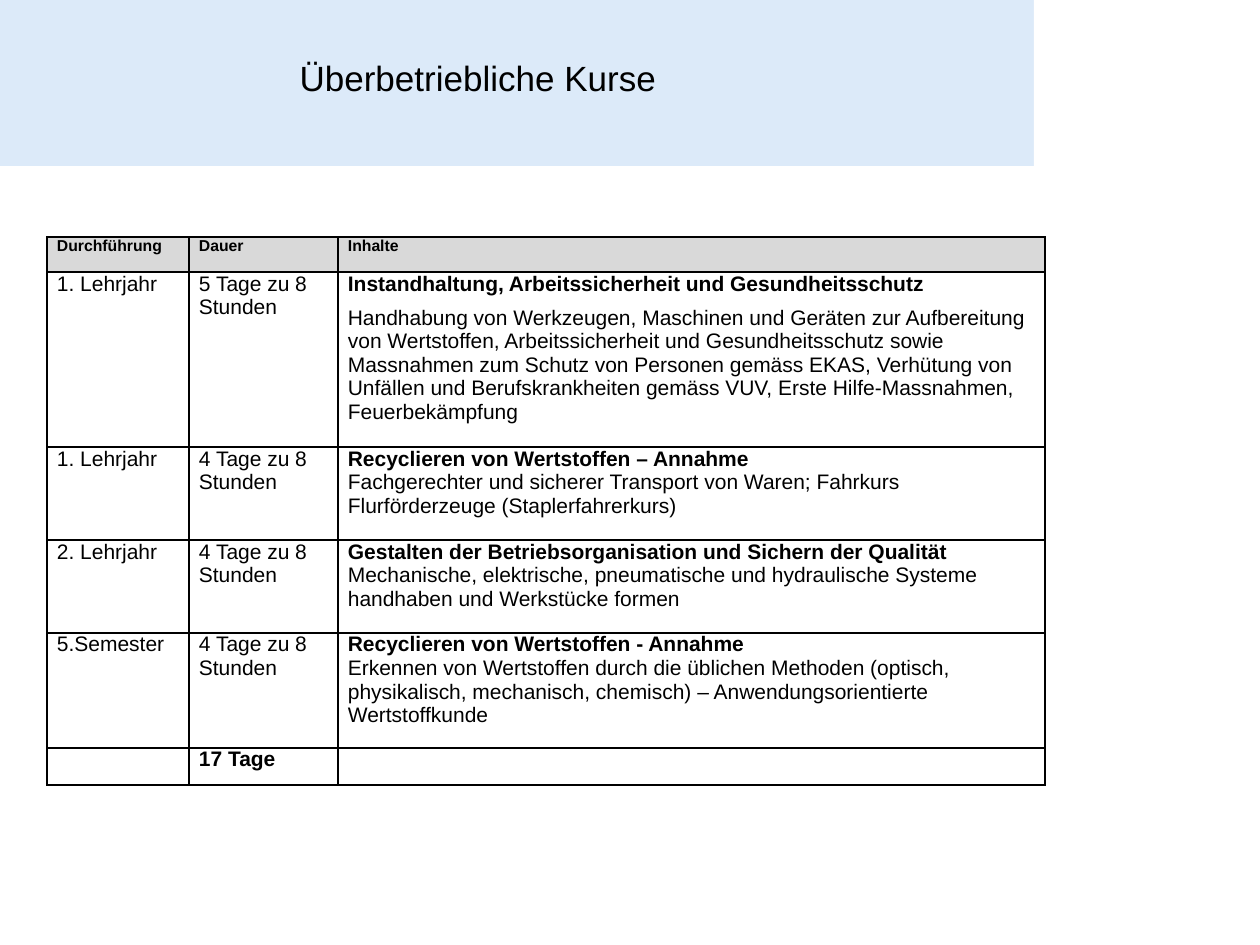
from dataclasses import dataclass

from lxml.etree import SubElement
from pptx import Presentation
from pptx.dml.color import RGBColor
from pptx.enum.shapes import MSO_SHAPE
from pptx.enum.text import MSO_ANCHOR, MSO_AUTO_SIZE, PP_ALIGN
from pptx.oxml.ns import qn
from pptx.util import Emu, Pt

SCALE = 914400 // 126


@dataclass(frozen=True)
class Theme:
    """Hold the colours and type sizes of the slide."""
    font: str = "Arial"
    ink: str = "000000"
    band: str = "DCEAF9"
    head: str = "D9D9D9"
    paper: str = "FFFFFF"
    title: int = 20
    label: int = 9
    body: int = 12
    gap: int = 3
    rule: int = 1


THEME = Theme()
TITLE = "Überbetriebliche Kurse"
COLS = [142, 149, 707]
HEIGHTS = [35, 175, 93, 93, 115, 37]
HEADS = ["Durchführung", "Dauer", "Inhalte"]
COURSES = [
    ("1. Lehrjahr", 5, "Instandhaltung, Arbeitssicherheit und Gesundheitsschutz",
     "Handhabung von Werkzeugen, Maschinen und Geräten zur Aufbereitung von "
     "Wertstoffen, Arbeitssicherheit und Gesundheitsschutz sowie Massnahmen zum "
     "Schutz von Personen gemäss EKAS, Verhütung von Unfällen und "
     "Berufskrankheiten gemäss VUV, Erste Hilfe-Massnahmen, Feuerbekämpfung"),
    ("1. Lehrjahr", 4, "Recyclieren von Wertstoffen – Annahme",
     "Fachgerechter und sicherer Transport von Waren; Fahrkurs Flurförderzeuge "
     "(Staplerfahrerkurs)"),
    ("2. Lehrjahr", 4, "Gestalten der Betriebsorganisation und Sichern der Qualität",
     "Mechanische, elektrische, pneumatische und hydraulische Systeme handhaben "
     "und Werkstücke formen"),
    ("5.Semester", 4, "Recyclieren von Wertstoffen - Annahme",
     "Erkennen von Wertstoffen durch die üblichen Methoden (optisch, "
     "physikalisch, mechanisch, chemisch) – Anwendungsorientierte Wertstoffkunde"),
]


def px(count):
    """Turn whole pixels into EMU."""
    return Emu(count * SCALE)


def apply(target, values):
    """Set each attribute named in a dict."""
    for name, value in values.items():
        setattr(target, name, value)


def place(shape, box):
    """Move a shape to a box given in pixels."""
    apply(shape, dict(zip(("left", "top", "width", "height"), map(px, box))))


def paint(fill, tint):
    """Give a fill one solid colour."""
    fill.solid()
    fill.fore_color.rgb = RGBColor.from_string(tint)


def write(para, text, size, bold=False):
    """Add one styled run to a paragraph."""
    run = para.add_run()
    run.text = text
    apply(run.font, {"name": THEME.font, "size": Pt(size), "bold": bold})
    run.font.color.rgb = RGBColor.from_string(THEME.ink)


def panel(slide, box, tint, layer):
    """Draw a plain panel at a given layer behind the title."""
    shape = slide.shapes.add_shape(MSO_SHAPE.RECTANGLE, *map(px, box))
    shape.shadow.inherit = False
    paint(shape.fill, tint)
    shape.line.fill.background()
    tree = shape._element.getparent()
    tree.insert(2 + layer, shape._element)


def banner(slide, box):
    """Draw the tinted band, its white end and the slide title."""
    left, top, width, height = box
    end = 226
    panel(slide, box, THEME.band, 0)
    panel(slide, (left + width - end, top, end, height), THEME.paper, 1)
    title = slide.shapes.title
    place(title, (left + 287, top + 50, width - end - 287, 79))
    frame = title.text_frame
    apply(frame, {"vertical_anchor": MSO_ANCHOR.TOP, "word_wrap": True,
                  "auto_size": MSO_AUTO_SIZE.NONE})
    para = frame.paragraphs[0]
    para.alignment = PP_ALIGN.LEFT
    write(para, TITLE, THEME.title)


def rule(cell):
    """Draw the four borders of a cell."""
    props = cell._tc.get_or_add_tcPr()
    for side in ("lnL", "lnR", "lnT", "lnB"):
        line = SubElement(props, qn(f"a:{side}"), w=str(Pt(THEME.rule)))
        solid = SubElement(line, qn("a:solidFill"))
        SubElement(solid, qn("a:srgbClr"), val=THEME.ink)


def dress(cell, tint):
    """Set the margins, borders and fill of a cell."""
    apply(cell, {"margin_left": px(10), "margin_right": px(9),
                 "margin_top": 0, "margin_bottom": 0})
    rule(cell)
    paint(cell.fill, tint)


def put(cell, parts, size):
    """Write a cell from paragraphs of (text, bold) runs."""
    frame = cell.text_frame
    for index, runs in enumerate(parts):
        para = frame.add_paragraph() if index else frame.paragraphs[0]
        para.space_before = Pt(THEME.gap if index else 0)
        para.space_after = Pt(THEME.gap)
        for order, (text, bold) in enumerate(runs):
            if order:
                para.add_line_break()
            write(para, text, size, bold)
        if not runs:
            SubElement(para._p, qn("a:endParaRPr"), sz=str(size * 100))


def records():
    """Lay out the paragraphs of every table row."""
    yield [[[(head, True)]] for head in HEADS]
    for index, (year, days, topic, text) in enumerate(COURSES):
        lead, rest = (topic, True), (text, False)
        detail = [[lead, rest]] if index else [[lead], [rest]]
        yield [[[(year, False)]], [[(f"{days} Tage zu 8 Stunden", False)]], detail]
    total = sum(course[1] for course in COURSES)
    yield [[[]], [[(f"{total} Tage", True)]], [[]]]


def schedule(slide, box):
    """Build the course table in its box."""
    frame = slide.shapes.add_table(len(HEIGHTS), len(COLS), *map(px, box))
    table = frame.table
    for col, width in zip(table.columns, COLS):
        col.width = px(width)
    for index, (row, height, record) in enumerate(zip(table.rows, HEIGHTS, records())):
        row.height = px(height)
        tint, size = (THEME.paper, THEME.body) if index else (THEME.head, THEME.label)
        for cell, parts in zip(row.cells, record):
            dress(cell, tint)
            put(cell, parts, size)


def main():
    """Build and save the slide."""
    deck = Presentation()
    apply(deck, {"slide_width": px(1260), "slide_height": px(945)})
    slide = deck.slides.add_slide(deck.slide_layouts[5])
    banner(slide, (0, 0, 1260, 166))
    schedule(slide, (47, 237, sum(COLS), sum(HEIGHTS)))
    deck.save("out.pptx")


if __name__ == "__main__":
    main()
